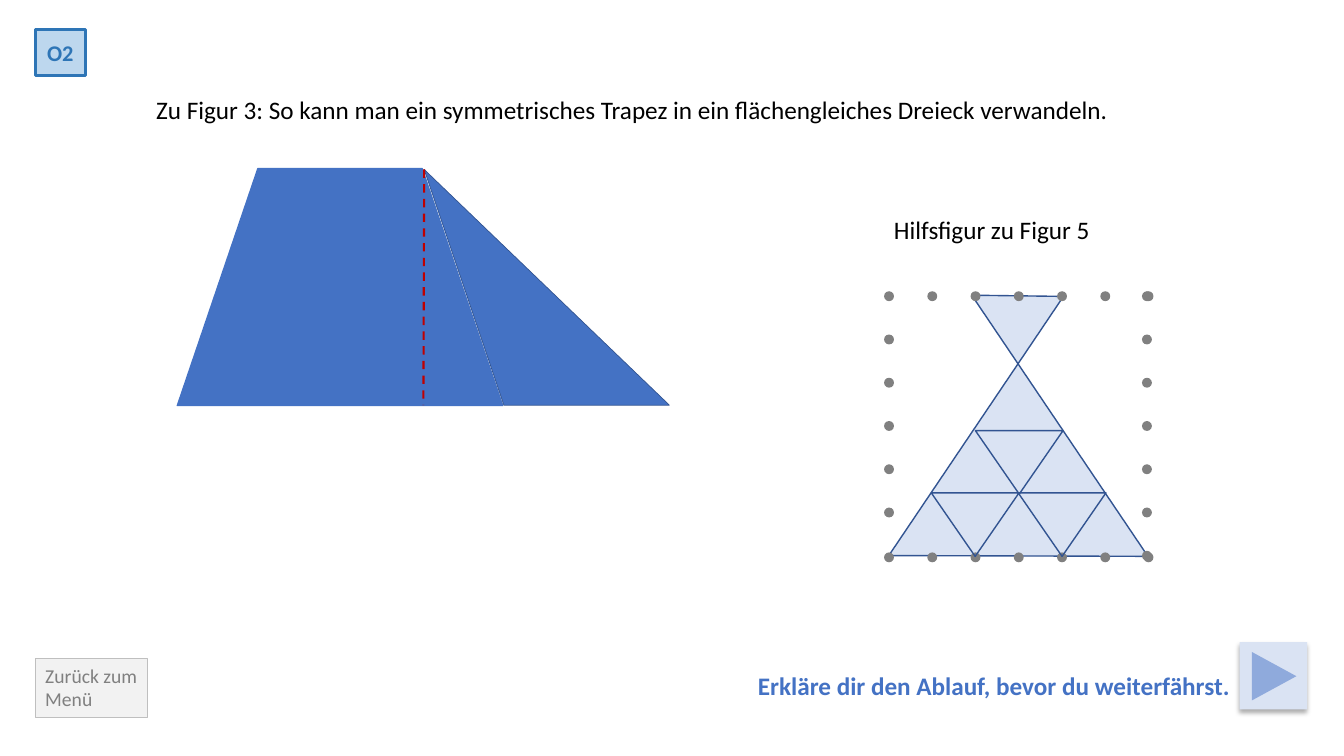
from lxml.etree import SubElement
from pptx import Presentation
from pptx.dml.color import RGBColor
from pptx.enum.dml import MSO_LINE_DASH_STYLE as Dash
from pptx.enum.shapes import MSO_CONNECTOR as Connector, MSO_SHAPE as Shape
from pptx.enum.text import MSO_ANCHOR as Anchor, MSO_AUTO_SIZE as AutoSize, PP_ALIGN as Align
from pptx.oxml.ns import qn
from pptx.util import Cm, Pt

COLOURS = {
    "black": "000000",
    "blue": "4472C4",
    "navy": "325491",
    "pale": "DAE3F3",
    "arrow": "8FAADC",
    "red": "C00000",
    "dot": "808080",
    "badge": "BDD7EE",
    "badge_edge": "2E75B6",
    "menu": "F2F2F2",
    "menu_edge": "BFBFBF",
}

DOT_SIZE = 0.25
DOT_STEP = 1.09
DOTS_PER_SIDE = 7
DOTS_LEFT, DOTS_RIGHT = 22.28, 28.78
DOTS_TOP, DOTS_BOTTOM = 7.34, 13.92


def rgb(name):
    return RGBColor.from_string(COLOURS[name])


def paint(shape, fill=None, edge=None, edge_width=1):
    shape.shadow.inherit = False
    if fill:
        shape.fill.solid()
        shape.fill.fore_color.rgb = rgb(fill)
    else:
        shape.fill.background()
    if edge:
        shape.line.color.rgb = rgb(edge)
        shape.line.width = Pt(edge_width)
    else:
        shape.line.fill.background()
    return shape


def add_preset(slide, kind, left, top, width, height, **look):
    shape = slide.shapes.add_shape(kind, Cm(left), Cm(top), Cm(width), Cm(height))
    return paint(shape, **look)


def add_polygon(slide, corners, **look):
    start, *others = [(Cm(x), Cm(y)) for x, y in corners]
    builder = slide.shapes.build_freeform(*start)
    builder.add_line_segments(others, close=True)
    return paint(builder.convert_to_shape(), **look)


def write(shape, text, size, colour, bold=False, align=Align.LEFT, anchor=Anchor.TOP):
    frame = shape.text_frame
    frame.text = text
    frame.word_wrap = True
    frame.auto_size = AutoSize.NONE
    frame.vertical_anchor = anchor
    paragraph = frame.paragraphs[0]
    paragraph.alignment = align
    font = paragraph.font
    font.name, font.size, font.bold = "Calibri", Pt(size), bold
    font.color.rgb = rgb(colour)


def add_label(slide, left, top, width, text, **style):
    label = slide.shapes.add_textbox(Cm(left), Cm(top), Cm(width), Cm(1.02))
    write(label, text, 18, **style)


def set_title(slide, text):
    title = slide.shapes.title
    title.left, title.top = Cm(3.68), Cm(2.24)
    title.width, title.height = Cm(27.58), Cm(1.02)
    write(title, text, 18, "black")


def add_soft_shadow(shape):
    effects = shape._element.spPr.find(qn("a:effectLst"))
    shadow = SubElement(effects, qn("a:outerShdw"), blurRad=str(Pt(3.5)),
                        dist=str(Pt(2.2)), dir="5400000", algn="t", rotWithShape="0")
    colour = SubElement(shadow, qn("a:srgbClr"), val=COLOURS["black"])
    SubElement(colour, qn("a:alpha"), val="32000")


def add_trapezium(slide):
    """Trapezium, the flap that turns it into a triangle, and its dashed height."""
    trapezium = add_preset(slide, Shape.TRAPEZOID, 4.47, 4.25, 8.2, 5.97,
                           fill="blue", edge="blue")
    trapezium.adjustments[0] = 0.34
    add_polygon(slide, [(12.7, 10.21), (16.87, 10.21), (10.69, 4.27)],
                fill="blue", edge="navy", edge_width=0.5)
    height = slide.shapes.add_connector(Connector.STRAIGHT, Cm(10.69), Cm(4.27),
                                        Cm(10.67), Cm(10.21))
    height.line.color.rgb = rgb("red")
    height.line.width = Pt(1.5)
    height.line.dash_style = Dash.DASH
    SubElement(height._element.spPr, qn("a:effectLst"))


def add_dot_frame(slide):
    steps = [i * DOT_STEP for i in range(DOTS_PER_SIDE)]
    rows = [(DOTS_LEFT + s, y) for y in (DOTS_TOP, DOTS_BOTTOM) for s in steps]
    left_side = [(DOTS_LEFT, DOTS_TOP + s) for s in steps[1:-1]]
    right_side = [(DOTS_RIGHT, DOTS_TOP + s) for s in steps]
    for x, y in rows + left_side + right_side:
        add_preset(slide, Shape.OVAL, x, y, DOT_SIZE, DOT_SIZE, fill="dot")


def add_helper_figure(slide):
    add_polygon(slide, [(24.49, 7.44), (28.93, 14.02), (22.4, 14), (26.8, 7.47)],
                fill="pale", edge="navy")
    add_dot_frame(slide)
    for x, y in [(23.47, 12.42), (25.66, 12.42), (24.58, 10.85)]:
        inner = add_preset(slide, Shape.ISOSCELES_TRIANGLE, x, y, 2.21, 1.6, edge="navy")
        inner.rotation = 180
    add_label(slide, 22.28, 5.28, 6.17, "Hilfsfigur zu Figur 5", colour="black")


def add_next_button(slide):
    button = add_preset(slide, Shape.RECTANGLE, 31.24, 16.18, 1.7, 1.7, fill="pale")
    add_soft_shadow(button)
    arrow = add_preset(slide, Shape.ISOSCELES_TRIANGLE, 31.5, 16.48, 1.22, 1.12, fill="arrow")
    arrow.rotation = 90


def main():
    deck = Presentation()
    deck.slide_width, deck.slide_height = Cm(33.87), Cm(19.05)
    slide = deck.slides.add_slide(deck.slide_layouts[5])
    set_title(slide, "Zu Figur 3: So kann man ein symmetrisches Trapez "
                     "in ein flächengleiches Dreieck verwandeln.")

    badge = add_preset(slide, Shape.RECTANGLE, 0.89, 0.74, 1.26, 1.16,
                       fill="badge", edge="badge_edge", edge_width=2.25)
    write(badge, "O2", 16, "badge_edge", bold=True, align=Align.CENTER, anchor=Anchor.MIDDLE)
    menu = add_preset(slide, Shape.RECTANGLE, 0.89, 16.6, 2.82, 1.47,
                      fill="menu", edge="menu_edge", edge_width=0.75)
    write(menu, "Zurück zum Menü", 14, "dot")

    add_trapezium(slide)
    add_next_button(slide)
    add_label(slide, 18.85, 16.76, 14.07, "Erkläre dir den Ablauf, bevor du weiterfährst.",
              colour="blue", bold=True)
    add_helper_figure(slide)
    deck.save("out.pptx")


if __name__ == "__main__":
    main()
